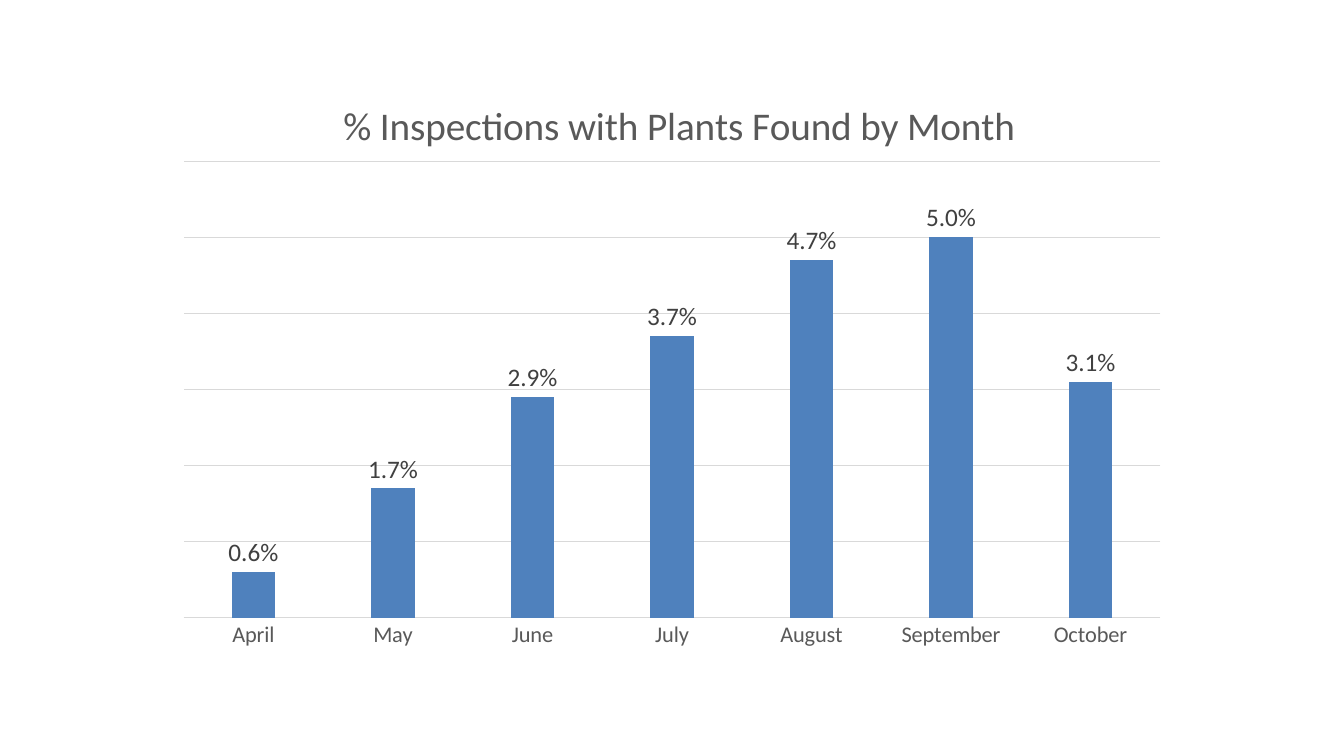
"""Build a slide with a column chart of inspections that found plants, by month."""
from typing import NamedTuple

from pptx import Presentation
from pptx.chart.data import CategoryChartData
from pptx.dml.color import RGBColor
from pptx.enum.chart import XL_CHART_TYPE, XL_LABEL_POSITION, XL_TICK_MARK
from pptx.oxml import parse_xml
from pptx.oxml.ns import nsdecls, qn
from pptx.util import Pt

COLUMNS = XL_CHART_TYPE.COLUMN_CLUSTERED
ABOVE_COLUMN = XL_LABEL_POSITION.OUTSIDE_END
NO_TICKS = XL_TICK_MARK.NONE

BLUE = RGBColor(0x4F, 0x81, 0xBD)
GREY = RGBColor(0x59, 0x59, 0x59)
DARK_GREY = RGBColor(0x40, 0x40, 0x40)
PALE_GREY = RGBColor(0xD9, 0xD9, 0xD9)

FONT = "Calibri"
EMU_PER_PX = 9144
BLANK_LAYOUT = 6


class Month(NamedTuple):
    name: str
    found_share: float


MONTHS = [
    Month("April", 0.006),
    Month("May", 0.017),
    Month("June", 0.029),
    Month("July", 0.037),
    Month("August", 0.047),
    Month("September", 0.05),
    Month("October", 0.031),
]


def px(length: int) -> int:
    return length * EMU_PER_PX


def style_font(font, size: int, color: RGBColor) -> None:
    font.name = FONT
    font.size = Pt(size)
    font.bold = False
    font.color.rgb = color


def style_line(line) -> None:
    line.color.rgb = PALE_GREY
    line.width = Pt(0.75)


def place(part, index: int, inner: bool = False, **fractions: float) -> None:
    for old_layout in part.findall(qn("c:layout")):
        part.remove(old_layout)
    target = '<c:layoutTarget val="inner"/>' if inner else ""
    modes = '<c:xMode val="edge"/><c:yMode val="edge"/>'
    values = "".join(f'<c:{key} val="{value}"/>' for key, value in fractions.items())
    part.insert(index, parse_xml(
        f'<c:layout {nsdecls("c")}><c:manualLayout>{target}{modes}{values}'
        "</c:manualLayout></c:layout>"))


def add_month_chart(slide) -> None:
    inspections = CategoryChartData(number_format="0.0%")
    inspections.categories = [month.name for month in MONTHS]
    inspections.add_series("Series 1", [month.found_share for month in MONTHS])
    chart = slide.shapes.add_chart(
        COLUMNS, px(162), px(61), px(1009), px(596), inspections).chart
    style_font(chart.font, 10, GREY)
    chart.has_legend = False

    heading = chart.chart_title.text_frame.paragraphs[0]
    heading.text = "% Inspections with Plants Found by Month"
    style_font(heading.font, 28, GREY)
    place(chart.chart_title._element, 1, x=0.17, y=0.05)

    months_axis = chart.category_axis
    months_axis.major_tick_mark = NO_TICKS
    style_line(months_axis.format.line)
    style_font(months_axis.tick_labels.font, 16, GREY)

    share_axis = chart.value_axis
    share_axis.minimum_scale = 0
    share_axis.maximum_scale = 0.06
    share_axis.major_unit = 0.01
    share_axis.visible = False
    style_line(share_axis.major_gridlines.format.line)

    columns = chart.plots[0]
    columns.vary_by_categories = False
    columns.gap_width = 219
    columns.overlap = -27
    found = columns.series[0]
    found.format.fill.solid()
    found.format.fill.fore_color.rgb = BLUE
    labels = found.data_labels
    labels.show_value = True
    labels.number_format = "0.0%"
    labels.number_format_is_linked = False
    labels.position = ABOVE_COLUMN
    style_font(labels.font, 18, DARK_GREY)

    plot_area = chart._chartSpace.chart.plotArea
    place(plot_area, 0, inner=True, x=0.02, y=0.166, w=0.96, h=0.76)


def main() -> None:
    presentation = Presentation()
    presentation.slide_width = px(1333)
    presentation.slide_height = px(750)
    slide = presentation.slides.add_slide(presentation.slide_layouts[BLANK_LAYOUT])
    add_month_chart(slide)
    presentation.save("out.pptx")


if __name__ == "__main__":
    main()
